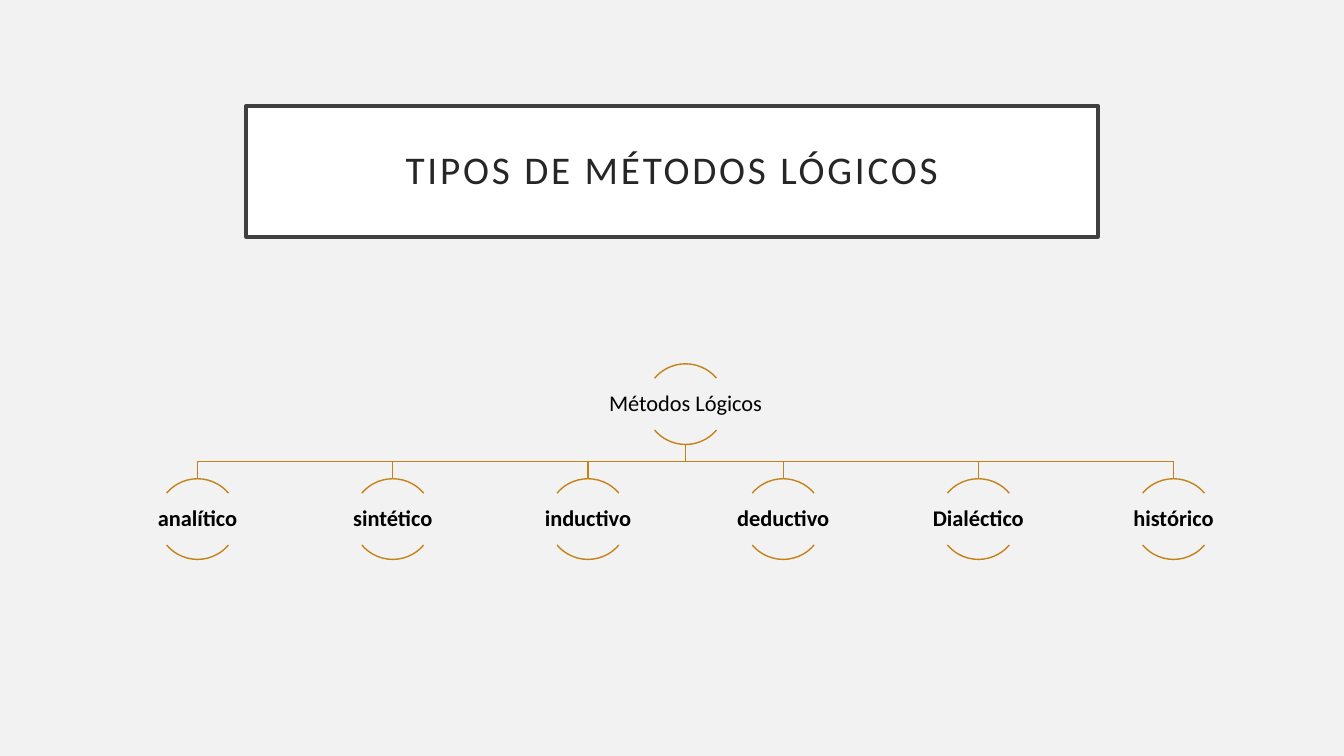
from dataclasses import dataclass

from pptx import Presentation
from pptx.dml.color import RGBColor
from pptx.enum.shapes import MSO_SHAPE as Preset
from pptx.enum.text import MSO_ANCHOR as Anchor, MSO_AUTO_SIZE as AutoSize, PP_ALIGN as Align
from pptx.util import Inches, Pt

BACKGROUND = RGBColor(0xF2, 0xF2, 0xF2)
WHITE = RGBColor(0xFF, 0xFF, 0xFF)
BLACK = RGBColor(0x00, 0x00, 0x00)
CHARCOAL = RGBColor(0x40, 0x40, 0x40)
TITLE_INK = RGBColor(0x26, 0x26, 0x26)
OCHRE = RGBColor(0xC5, 0x82, 0x17)

FIRST_COLUMN, LAST_COLUMN = 1.96, 11.64
FIRST_ROW, ROW_PITCH = 3.61, 1.14
DIAMETER = 0.8
LABEL_WIDTH, LABEL_HEIGHT = 1.6, 0.51
ARC_SPANS = ((132, 192), (24, 84))
METHOD_NAMES = ("analítico", "sintético", "inductivo", "deductivo", "Dialéctico", "histórico")
COLUMN_PITCH = (LAST_COLUMN - FIRST_COLUMN) / (len(METHOD_NAMES) - 1)


@dataclass(frozen=True)
class Method:
    name: str
    column: float
    row: int
    bold: bool = True

    @property
    def center(self) -> float:
        return FIRST_COLUMN + self.column * COLUMN_PITCH

    @property
    def top(self) -> float:
        return FIRST_ROW + self.row * ROW_PITCH

    @property
    def bottom(self) -> float:
        return self.top + DIAMETER


def format_text(shape, text: str, inset: float, size: float, color: RGBColor, bold: bool):
    frame = shape.text_frame
    frame_format = {"word_wrap": True, "auto_size": AutoSize.NONE, "vertical_anchor": Anchor.MIDDLE}
    frame_format |= {f"margin_{side}": Inches(inset) for side in ("left", "top", "right", "bottom")}
    for key, value in frame_format.items():
        setattr(frame, key, value)
    paragraph = frame.paragraphs[0]
    paragraph.alignment = Align.CENTER
    paragraph.line_spacing = 0.9
    run = paragraph.add_run()
    run.text = text
    for key, value in {"name": "Calibri", "size": Pt(size), "bold": bold}.items():
        setattr(run.font, key, value)
    run.font.color.rgb = color
    return run


def outline(shape) -> None:
    shape.shadow.inherit = False
    shape.fill.background()
    shape.line.color.rgb = OCHRE
    shape.line.width = Pt(1)


def draw_title(slide, text: str) -> None:
    title = slide.shapes.title
    place = {"left": 2.44, "top": 1.05, "width": 8.45, "height": 1.3}
    for key, value in place.items():
        setattr(title, key, Inches(value))
    title.fill.solid()
    title.fill.fore_color.rgb = WHITE
    title.line.color.rgb = CHARCOAL
    title.line.width = Pt(2.5)
    run = format_text(title, text, 0.2, 28, TITLE_INK, False)
    run.font._element.set("spc", "200")


def draw_branch(slide, parent: Method, child: Method) -> None:
    middle = (parent.bottom + child.top) / 2
    turns = ((parent.center, middle), (child.center, middle), (child.center, child.top))
    builder = slide.shapes.build_freeform(Inches(parent.center), Inches(parent.bottom))
    builder.add_line_segments([(Inches(x), Inches(y)) for x, y in turns], close=False)
    outline(builder.convert_to_shape())


def draw_method(slide, method: Method) -> None:
    for start, end in ARC_SPANS:
        arc = slide.shapes.add_shape(
            Preset.ARC, Inches(method.center - DIAMETER / 2), Inches(method.top),
            Inches(DIAMETER), Inches(DIAMETER))
        arc.adjustments[0] = start
        arc.adjustments[1] = end
        outline(arc)
    label = slide.shapes.add_textbox(
        Inches(method.center - LABEL_WIDTH / 2),
        Inches(method.top + (DIAMETER - LABEL_HEIGHT) / 2),
        Inches(LABEL_WIDTH), Inches(LABEL_HEIGHT))
    format_text(label, method.name, 0.01, 16, BLACK, method.bold)


def main() -> None:
    deck = Presentation()
    deck.slide_width, deck.slide_height = Inches(13.33), Inches(7.5)
    slide = deck.slides.add_slide(deck.slide_layouts.get_by_name("Title Only"))
    slide.background.fill.solid()
    slide.background.fill.fore_color.rgb = BACKGROUND
    draw_title(slide, "TIPOS DE MÉTODOS LÓGICOS")

    root = Method("Métodos Lógicos", (len(METHOD_NAMES) - 1) / 2, 0, bold=False)
    methods = [Method(name, column, 1) for column, name in enumerate(METHOD_NAMES)]
    for method in reversed(methods):
        draw_branch(slide, root, method)
    for method in (root, *methods):
        draw_method(slide, method)
    deck.save("out.pptx")


if __name__ == "__main__":
    main()
